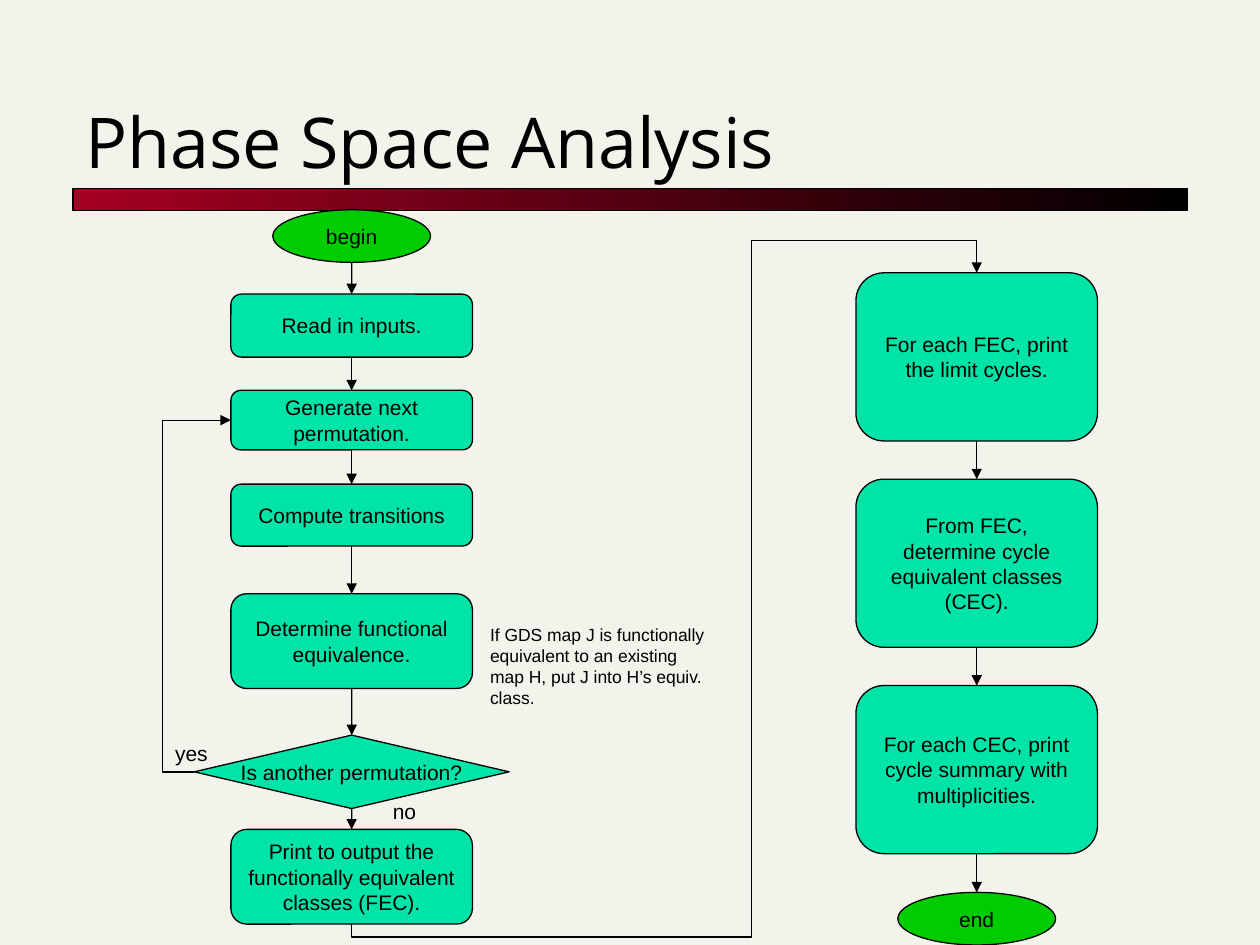
"""Build the Phase Space Analysis flowchart slide."""
from dataclasses import dataclass

from lxml.etree import SubElement
from pptx import Presentation
from pptx.dml.color import RGBColor as RGB
from pptx.enum.shapes import MSO_CONNECTOR as LINK, MSO_SHAPE as SHAPE
from pptx.enum.text import MSO_ANCHOR as ANCHOR, MSO_AUTO_SIZE as AUTO, PP_ALIGN as ALIGN
from pptx.oxml.ns import qn
from pptx.util import Cm, Pt


@dataclass(frozen=True)
class Theme:
    background: RGB = RGB.from_string("F4F3EB")
    ink: RGB = RGB.from_string("000000")
    accent: RGB = RGB.from_string("A50021")
    step: RGB = RGB.from_string("00E4A8")
    terminal: RGB = RGB.from_string("00CC00")
    title_font: str = "Open Sans"
    body_font: str = "Arial"
    title_size: int = 40
    body_size: int = 12
    note_size: int = 10
    line_width: float = 0.75


THEME = Theme()
TITLE = "Phase Space Analysis"
TITLE_BOX = (1.47, 1.07, 22.43, 2.74)
BAR_BOX = (1.47, 3.8, 22.46, 0.44)

KINDS = {
    "terminal": (SHAPE.OVAL, 3.18, THEME.terminal),
    "step": (SHAPE.ROUNDED_RECTANGLE, 4.87, THEME.step),
    "decision": (SHAPE.DIAMOND, 6.35, THEME.step),
}
LEFT_AXIS, RIGHT_AXIS = 7.09, 19.69
RIGHT_TOP, RIGHT_PITCH, RIGHT_HEIGHT = 5.5, 4.16, 3.39

LEFT_NODES = [
    ("terminal", 4.23, 1.06, "begin", False),
    ("step", 5.93, 1.27, "Read in inputs.", False),
    ("step", 7.87, 1.2, "Generate next permutation.", True),
    ("step", 9.76, 1.25, "Compute transitions", True),
    ("step", 11.97, 1.91, "Determine functional equivalence.", True),
    ("decision", 14.82, 1.48, "Is another permutation?", False),
    ("step", 16.72, 1.91, "Print to output the functionally equivalent classes (FEC).", True),
]
RIGHT_STEPS = [
    "For each FEC, print the limit cycles.",
    "From FEC, determine cycle equivalent classes (CEC).",
    "For each CEC, print cycle summary with multiplicities.",
]
RIGHT_NODES = [
    ("step", RIGHT_TOP + index * RIGHT_PITCH, RIGHT_HEIGHT, text, True)
    for index, text in enumerate(RIGHT_STEPS)
] + [("terminal", 17.99, 1.06, "end", False)]

LABELS = [
    ((9.63, 12.45, 4.9, 1.96), THEME.note_size, True,
     "If GDS map J is functionally equivalent to an existing map H, put J into H’s equiv. class."),
    ((7.67, 15.98, 0.99, 0.76), THEME.body_size, False, "no"),
    ((3.28, 14.81, 1.17, 0.76), THEME.body_size, False, "yes"),
]


def lengths(values):
    return [Cm(value) for value in values]


def write(shape, text, size, font=THEME.body_font, align=ALIGN.LEFT):
    paragraph = shape.text_frame.paragraphs[0]
    paragraph.alignment = align
    run = paragraph.add_run()
    run.text = text
    run.font.name = font
    run.font.size = Pt(size)
    run.font.color.rgb = THEME.ink


def outline(shape):
    shape.line.color.rgb = THEME.ink
    shape.line.width = Pt(THEME.line_width)


def add_title(slide):
    title = slide.shapes.title
    title.left, title.top, title.width, title.height = lengths(TITLE_BOX)
    frame = title.text_frame
    frame.auto_size = AUTO.NONE
    frame.word_wrap = True
    frame.vertical_anchor = ANCHOR.BOTTOM
    write(title, TITLE, THEME.title_size, THEME.title_font)


def add_bar(slide):
    bar = slide.shapes.add_shape(SHAPE.RECTANGLE, *lengths(BAR_BOX))
    bar.shadow.inherit = False
    bar.fill.gradient()
    bar.fill.gradient_angle = 0
    for stop, color in zip(bar.fill.gradient_stops, (THEME.accent, THEME.ink)):
        stop.color.rgb = color
    outline(bar)


def add_node(slide, axis, kind, top, height, text, wrap):
    preset, width, color = KINDS[kind]
    node = slide.shapes.add_shape(preset, *lengths((axis - width / 2, top, width, height)))
    node.shadow.inherit = False
    node.fill.solid()
    node.fill.fore_color.rgb = color
    outline(node)
    node.text_frame.word_wrap = wrap
    node.text_frame.vertical_anchor = ANCHOR.MIDDLE
    write(node, text, THEME.body_size, align=ALIGN.CENTER)
    return node


def add_arrow(slide, kind, start, end):
    arrow = slide.shapes.add_connector(kind, *map(int, (*start, *end)))
    outline(arrow)
    properties = arrow.element.spPr
    SubElement(properties.find(qn("a:ln")), qn("a:tailEnd"), type="triangle")
    SubElement(properties, qn("a:effectLst"))
    return arrow


def add_elbow(slide, start, end, preset, quarter_turns, adjustments):
    center_x, center_y = (start[0] + end[0]) / 2, (start[1] + end[1]) / 2
    x, y = start[0] - center_x, start[1] - center_y
    for _ in range(quarter_turns):
        x, y = y, -x
    arrow = add_arrow(slide, LINK.ELBOW, (center_x + x, center_y + y), (center_x - x, center_y - y))
    properties = arrow.element.spPr
    properties.find(qn("a:xfrm")).set("rot", str(quarter_turns * 5400000))
    geometry = properties.find(qn("a:prstGeom"))
    geometry.set("prst", preset)
    guides = geometry.find(qn("a:avLst"))
    for number, value in enumerate(adjustments, 1):
        SubElement(guides, qn("a:gd"), name=f"adj{number}", fmla=f"val {round(value * 100000)}")


def add_column(slide, axis, rows):
    nodes = [add_node(slide, axis, *row) for row in rows]
    for row, source, target in zip(rows, nodes, nodes[1:]):
        start = (Cm(axis), source.top + source.height)
        arrow = add_arrow(slide, LINK.STRAIGHT, start, (Cm(axis), target.top))
        if row[0] != "terminal":
            arrow.begin_connect(source, 2)
        arrow.end_connect(target, 0)
    return nodes


def add_label(slide, box, size, wrap, text):
    label = slide.shapes.add_textbox(*lengths(box))
    label.text_frame.word_wrap = wrap
    label.text_frame.auto_size = AUTO.SHAPE_TO_FIT_TEXT
    write(label, text, size)


def main():
    presentation = Presentation()
    presentation.slide_width, presentation.slide_height = Cm(25.4), Cm(19.05)
    slide = presentation.slides.add_slide(presentation.slide_layouts[5])
    slide.background.fill.solid()
    slide.background.fill.fore_color.rgb = THEME.background
    add_bar(slide)
    add_title(slide)
    left = add_column(slide, LEFT_AXIS, LEFT_NODES)
    right = add_column(slide, RIGHT_AXIS, RIGHT_NODES)
    generate, decision, output = left[2], left[5], left[6]
    add_elbow(slide, (decision.left, decision.top + decision.height / 2),
              (generate.left, generate.top + generate.height / 2),
              "bentConnector3", 2, [-0.86])
    add_elbow(slide, (Cm(LEFT_AXIS), output.top + output.height),
              (Cm(RIGHT_AXIS), right[0].top),
              "bentConnector5", 1, [-0.02, 0.64, 1.05])
    for label in LABELS:
        add_label(slide, *label)
    presentation.save("out.pptx")


if __name__ == "__main__":
    main()
